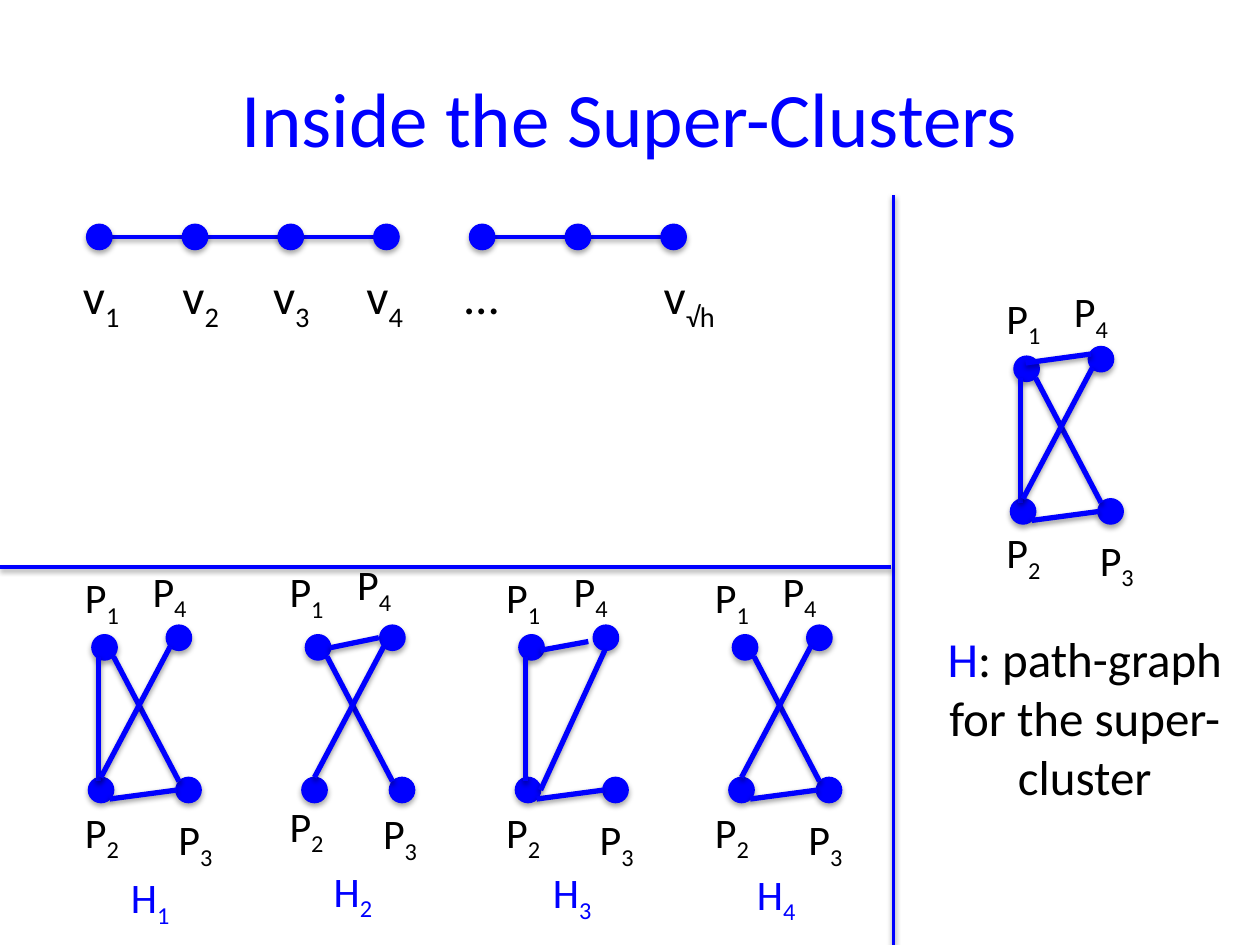
from lxml import etree
from pptx import Presentation
from pptx.dml.color import RGBColor
from pptx.enum import shapes, text
from pptx.oxml import parse_xml
from pptx.util import Pt

BLUE = RGBColor(0x00, 0x00, 0xFF)
BLACK = RGBColor(0x00, 0x00, 0x00)
DML = "http://schemas.openxmlformats.org/drawingml/2006/main"
DOT = 14.5

# Path-graph geometry in points, relative to the graph's left and top
NODES = [(2, 5.5), (0, 87), (50, 87), (44.5, 0)]
EDGES = {
    "12": (5.8, 18, 5.8, 89.3),
    "13": (14.4, 18, 51.8, 89.3),
    "14": (16, 13, 44, 7.2),
    "23": (50.4, 94.3, 12.2, 99.4),
    "24": (46.8, 12.2, 7.2, 87),
}
# Node labels, relative to the label of P1
LABELS = [(0, 0), (0, 134), (53.4, 138.2), (38.6, -3.8)]


def add_shadow(shape, alpha, distance):
    shape._element.spPr.append(parse_xml(
        f'<a:effectLst xmlns:a="{DML}"><a:outerShdw blurRad="{Pt(3.1)}" '
        f'dist="{Pt(distance)}" dir="5400000" rotWithShape="0">'
        f'<a:srgbClr val="000000"><a:alpha val="{alpha * 1000}"/></a:srgbClr>'
        '</a:outerShdw></a:effectLst>'))


def add_line(canvas, x1, y1, x2, y2, width=2):
    line = canvas.add_connector(shapes.MSO_CONNECTOR.STRAIGHT,
                                Pt(x1), Pt(y1), Pt(x2), Pt(y2))
    line.line.color.rgb = BLUE
    line.line.width = Pt(width)
    add_shadow(line, 38, 1.6)


def add_dot(canvas, x, y):
    dot = canvas.add_shape(shapes.MSO_SHAPE.OVAL, Pt(x), Pt(y), Pt(DOT), Pt(DOT))
    dot.fill.solid()
    dot.fill.fore_color.rgb = BLUE
    dot.line.color.rgb = BLUE
    dot.line.width = Pt(0.75)
    add_shadow(dot, 35, 1.8)


def add_text(canvas, x, y, w, h, main, sub="", rest="", size=24, color=BLACK,
             align=text.PP_ALIGN.LEFT, anchor=text.MSO_ANCHOR.TOP):
    """Main text in the given colour, then a subscript, then black text."""
    frame = canvas.add_textbox(Pt(x), Pt(y), Pt(w), Pt(h)).text_frame
    frame.word_wrap = True
    frame.vertical_anchor = anchor
    paragraph = frame.paragraphs[0]
    paragraph.alignment = align
    for words, run_color in ((main, color), (sub, color), (rest, BLACK)):
        if not words:
            continue
        run = paragraph.add_run()
        run.text = words
        run.font.name = "Calibri"
        run.font.size = Pt(size)
        run.font.color.rgb = run_color
        if words == sub:
            run.font._element.set("baseline", "-25000")


def add_label(canvas, x, y, main, sub, color=BLACK):
    add_text(canvas, x, y, 45.4, 36.4, main, sub, color=color)


def add_path_graph(canvas, left, top, label_at, edges, moved=None):
    for x, y in NODES:
        add_dot(canvas, left + x, top + y)
    places = {**EDGES, **(moved or {})}
    for edge in edges:
        x1, y1, x2, y2 = places[edge]
        add_line(canvas, left + x1, top + y1, left + x2, top + y2, width=3)
    for number, (x, y) in enumerate(LABELS, 1):
        add_label(canvas, label_at[0] + x, label_at[1] + y, "P", str(number))


def add_vertex_path(canvas):
    first, pitch, middle = 49.5, 54.7, 135.4
    for start, end in ((0, 3), (4, 6)):
        add_line(canvas, first + start * pitch + DOT - 2, middle,
                 first + end * pitch, middle)
    for i in range(7):
        add_dot(canvas, first + i * pitch, middle - DOT / 2)
    vertices = [(40.3, "v", "1"), (97.2, "v", "2"), (149, "v", "3"),
                (202.3, "v", "4"), (258.5, "…", ""), (372.2, "v", "√h")]
    for x, main, sub in vertices:
        add_text(canvas, x, 148.3, 48.2, 41.2, main, sub, size=28)


def main():
    prs = Presentation()
    prs.slide_width, prs.slide_height = Pt(720), Pt(540)
    canvas = prs.slides.add_slide(prs.slide_layouts[6]).shapes

    # Title and dividers
    add_text(canvas, 36, 21.6, 648, 90, "Inside the Super-Clusters", size=44,
             color=BLUE, align=text.PP_ALIGN.CENTER,
             anchor=text.MSO_ANCHOR.MIDDLE)
    add_line(canvas, 510.5, 111.6, 510.5, 540)
    add_line(canvas, 0, 324, 509, 324)

    # Path-graph of the whole super-cluster
    add_path_graph(canvas, 577.4, 198, (568, 163.6), EDGES,
                   {"14": (46.1, 4.3, 8.7, 9.4)})
    add_text(canvas, 532, 355.7, 175.7, 108.7, "H",
             rest=": path-graph for the super-cluster",
             size=28, color=BLUE, align=text.PP_ALIGN.CENTER)

    # Path-graphs H1 to H4: P1 label, name position, edges, moved edges
    graphs = [
        ((41.5, 323.3), (67.7, 494.6), ("12", "13", "23", "24"), None),
        ((158.4, 319.7), (183.6, 491), ("14", "13", "24"), None),
        ((282.2, 323.3), (308.9, 491.8), ("12", "23", "24", "14"),
         {"24": (51.1, 14.4, 14.4, 94.3), "14": (14.4, 14.4, 41.7, 9.4)}),
        ((401.5, 323.2), (425.5, 492.5), ("13", "23", "24"), None),
    ]
    for i, (label_at, name_at, edges, moved) in enumerate(graphs):
        group = canvas.add_group_shape().shapes
        add_path_graph(group, 50.5 + 122 * i, 357.2, label_at, edges, moved)
        add_label(group, *name_at, "H", str(i + 1), color=BLUE)

    # Path of vertices
    add_vertex_path(canvas.add_group_shape().shapes)

    prs.save("out.pptx")


if __name__ == "__main__":
    main()
